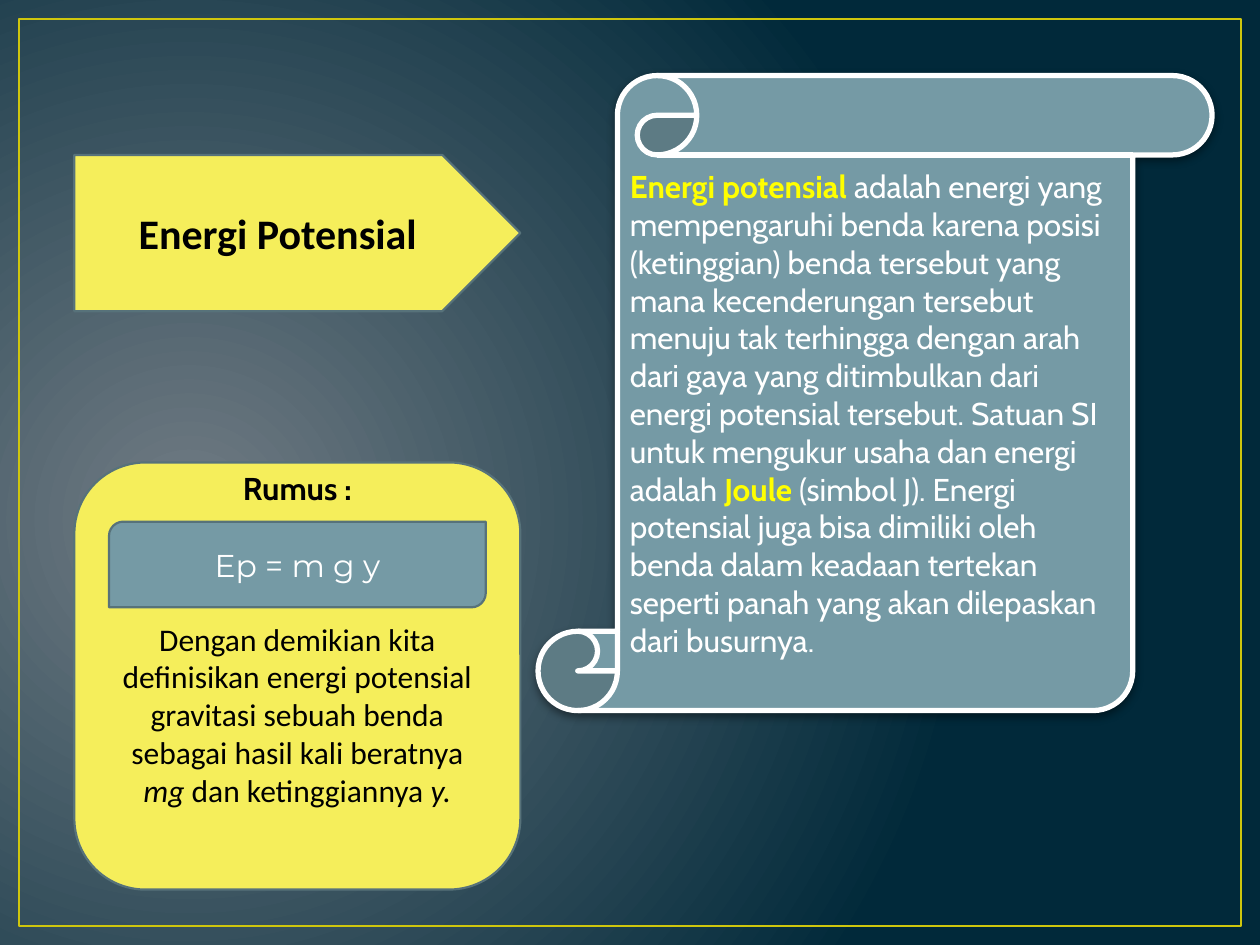
from lxml import etree
from pptx import Presentation
from pptx.dml.color import RGBColor
from pptx.enum.shapes import MSO_SHAPE
from pptx.enum.text import MSO_ANCHOR, PP_ALIGN
from pptx.oxml import parse_xml
from pptx.oxml.ns import nsdecls, qn
from pptx.util import Inches, Pt

MIDDLE = MSO_ANCHOR.MIDDLE
LEFT, CENTER = PP_ALIGN.LEFT, PP_ALIGN.CENTER
COLORS = {
    "glow": "717C84", "night": "01293A", "frame": "CFC60D",
    "yellow": "F5EE5B", "teal": "759AA5", "edge": "57727A",
    "accent": "FFFF00", "white": "FFFFFF", "black": "000000",
}
SLIDE_W, SLIDE_H = 10, 7.5
MARGIN = 0.15
COLUMN_X, COLUMN_W = 0.59, 3.54
HEADING_Y, HEADING_H = 1.23, 1.24
FORMULA_W = 2.99


def color(key):
    return RGBColor.from_string(COLORS[key])


def add_panel(preset, x, y, w, h, fill, line, line_width):
    panel = slide.shapes.add_shape(preset, Inches(x), Inches(y), Inches(w), Inches(h))
    panel.shadow.inherit = False
    if fill:
        panel.fill.solid()
        panel.fill.fore_color.rgb = color(fill)
    else:
        panel.fill.background()
    panel.line.color.rgb = color(line)
    panel.line.width = Pt(line_width)
    return panel


prs = Presentation()
prs.slide_width, prs.slide_height = Inches(SLIDE_W), Inches(SLIDE_H)
slide = prs.slides.add_slide(prs.slide_layouts[5])

# Radial background
background = slide.background.fill
background.gradient()
for stop, key in zip(background.gradient_stops, ("glow", "night")):
    stop.color.rgb = color(key)
gradient = slide.background._cSld.find(".//" + qn("a:gradFill"))
gradient.replace(gradient.find(qn("a:lin")), parse_xml(
    f'<a:path {nsdecls("a")} path="circle">'
    '<a:fillToRect l="15000" t="50000" r="85000" b="40000"/></a:path>'))

# Panels, from back to front
add_panel(MSO_SHAPE.RECTANGLE, MARGIN, MARGIN, SLIDE_W - 2 * MARGIN,
          SLIDE_H - 2 * MARGIN, None, "frame", 1.5)
heading = add_panel(MSO_SHAPE.PENTAGON, COLUMN_X, HEADING_Y, COLUMN_W, HEADING_H,
                    "yellow", "edge", 1.25)
scroll = add_panel(MSO_SHAPE.VERTICAL_SCROLL, 4.27, 0.6, 5.35, 5.04, "teal", "white", 3)
rule = add_panel(MSO_SHAPE.FLOWCHART_ALTERNATE_PROCESS, COLUMN_X, 3.67, COLUMN_W, 3.39,
                 "yellow", "edge", 1.25)
formula = add_panel(MSO_SHAPE.ROUND_2_DIAG_RECTANGLE,
                    COLUMN_X + (COLUMN_W - FORMULA_W) / 2, 4.14, FORMULA_W, 0.68,
                    "teal", "edge", 1.25)

scroll_effects = scroll._element.spPr.find(qn("a:effectLst"))
shadow = etree.SubElement(scroll_effects, qn("a:outerShdw"), blurRad=str(Pt(5)),
                          dist=str(Pt(2)), dir="5400000", rotWithShape="0")
shadow_color = etree.SubElement(shadow, qn("a:srgbClr"), val=COLORS["black"])
etree.SubElement(shadow_color, qn("a:alpha"), val="43000")

# The title covers the body of the arrow, up to half of its point
title = slide.shapes.title
heading._element.addnext(title._element)
title.left, title.top = Inches(COLUMN_X), Inches(HEADING_Y)
title.width, title.height = Inches(COLUMN_W - HEADING_H / 4), Inches(HEADING_H)

# The rule's text sits high and leaves room for the formula
rule.text_frame.margin_top = 0
rule.text_frame.margin_bottom = Inches(0.59)
FORMULA_GAP = 64.5

# Each paragraph: alignment, space before, runs of (text, font, colour, bold, italic)
texts = [
    (title, 24, [(CENTER, 0, [("Energi Potensial", "Calibri", "black", True, False)])]),
    (scroll, 18, [(LEFT, 0, [
        ("Energi potensial ", "Cabin", "accent", True, False),
        ("adalah energi yang mempengaruhi benda karena posisi (ketinggian) benda "
         "tersebut yang mana kecenderungan tersebut menuju tak terhingga dengan arah "
         "dari gaya yang ditimbulkan dari energi potensial tersebut. Satuan SI untuk "
         "mengukur usaha dan energi adalah ", "Cabin", "white", False, False),
        ("Joule", "Cabin", "accent", True, False),
        (" (simbol J). Energi potensial juga bisa dimiliki oleh benda dalam keadaan "
         "tertekan seperti panah yang akan dilepaskan dari busurnya.",
         "Cabin", "white", False, False),
    ])]),
    (rule, 18, [
        (CENTER, 0, [("Rumus :", "Cabin", "black", True, False)]),
        (CENTER, FORMULA_GAP, [
            ("Dengan demikian kita definisikan energi potensial gravitasi sebuah benda "
             "sebagai hasil kali beratnya ", "Calibri", "black", False, False),
            ("mg ", "Calibri", "black", False, True),
            ("dan ketinggiannya ", "Calibri", "black", False, False),
            ("y.", "Calibri", "black", False, True),
        ]),
    ]),
    (formula, 18, [(CENTER, 0, [("Ep = m g y", "Montserrat", "white", False, False)])]),
]
for holder, size, paragraphs in texts:
    frame = holder.text_frame
    frame.word_wrap = True
    frame.vertical_anchor = MIDDLE
    for index, (alignment, space, runs) in enumerate(paragraphs):
        paragraph = frame.add_paragraph() if index else frame.paragraphs[0]
        paragraph.alignment = alignment
        paragraph.space_before = Pt(space)
        for text, font, key, bold, italic in runs:
            run = paragraph.add_run()
            run.text = text
            run.font.name = font
            run.font.size = Pt(size)
            run.font.bold = bold
            run.font.italic = italic
            run.font.color.rgb = color(key)

prs.save("out.pptx")
